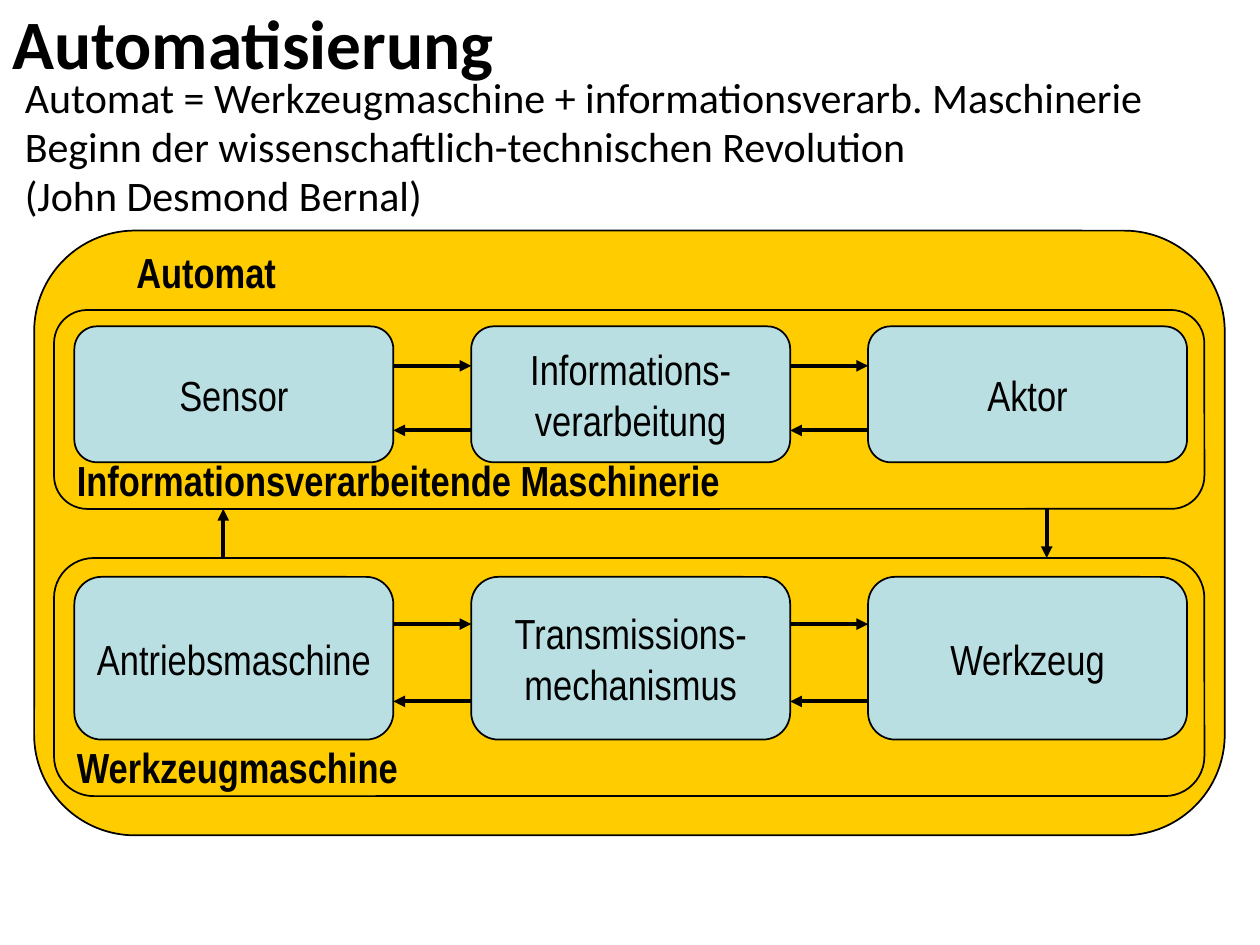
from lxml.etree import SubElement
from pptx import Presentation
from pptx.dml.color import RGBColor
from pptx.enum.shapes import MSO_CONNECTOR as Connector, MSO_SHAPE as Shape
from pptx.enum.text import MSO_ANCHOR as Anchor, PP_ALIGN as Align
from pptx.oxml.ns import qn
from pptx.util import Cm, Pt

BLACK = RGBColor(0x00, 0x00, 0x00)
YELLOW = RGBColor(0xFF, 0xCC, 0x00)
LIGHT_BLUE = RGBColor(0xBA, 0xDF, 0xE2)
HEADING_FONT, DIAGRAM_FONT = "Calibri", "Arial Narrow"

TITLE = "Automatisierung"
STATEMENTS = [
    "Automat = Werkzeugmaschine + informationsverarb. Maschinerie",
    "Beginn der wissenschaftlich-technischen Revolution",
    "(John Desmond Bernal)",
]
# Vertical measures in cm
MACHINES = [
    {"label": "Informationsverarbeitende Maschinerie", "label_top": 9.04,
     "top": 6.25, "height": 4.01, "part_top": 6.58, "part_height": 2.74,
     "parts": ["Sensor", "Informations-\nverarbeitung", "Aktor"]},
    {"label": "Werkzeugmaschine", "label_top": 14.83,
     "top": 11.25, "height": 4.8, "part_top": 11.63, "part_height": 3.28,
     "parts": ["Antriebsmaschine", "Transmissions-\nmechanismus", "Werkzeug"]},
]
MACHINE_LEFT, MACHINE_WIDTH = 1.09, 23.19
PART_LEFT, PART_WIDTH, PART_PITCH = 1.5, 6.43, 8
FORWARD, BACKWARD = 0.29, 0.765  # arrow heights as shares of the part height
UP_ARROW_X, DOWN_ARROW_X = 4.5, 21.1


def write(shape, text, size=24, font=DIAGRAM_FONT, bold=False, align=Align.LEFT):
    shape.text_frame.text = text
    for paragraph in shape.text_frame.paragraphs:
        paragraph.alignment = align
        paragraph.font.size = Pt(size)
        paragraph.font.name = font
        paragraph.font.bold = bold
        paragraph.font.color.rgb = BLACK


def add_text(page, left, top, width, height, text, **style):
    box = page.shapes.add_textbox(Cm(left), Cm(top), Cm(width), Cm(height))
    box.text_frame.word_wrap = True
    write(box, text, **style)
    return box


def add_rounded(page, left, top, width, height, color=None):
    shape = page.shapes.add_shape(
        Shape.ROUNDED_RECTANGLE, Cm(left), Cm(top), Cm(width), Cm(height))
    shape.shadow.inherit = False
    if color is None:
        shape.fill.background()
    else:
        shape.fill.solid()
        shape.fill.fore_color.rgb = color
    shape.line.color.rgb = BLACK
    shape.line.width = Pt(1)
    return shape


def add_arrow(page, x1, y1, x2, y2):
    arrow = page.shapes.add_connector(
        Connector.STRAIGHT, Cm(x1), Cm(y1), Cm(x2), Cm(y2))
    arrow.line.color.rgb = BLACK
    arrow.line.width = Pt(2.25)
    SubElement(arrow.line._get_or_add_ln(), qn("a:tailEnd"), type="triangle")
    SubElement(arrow._element.spPr, qn("a:effectLst"))


def add_machine(page, machine):
    """Draw a frame with its parts, the arrows between them and the label."""
    top, height = machine["part_top"], machine["part_height"]
    add_rounded(page, MACHINE_LEFT, machine["top"], MACHINE_WIDTH, machine["height"])
    for index, name in enumerate(machine["parts"]):
        left = PART_LEFT + index * PART_PITCH
        part = add_rounded(page, left, top, PART_WIDTH, height, LIGHT_BLUE)
        part.text_frame.word_wrap = False
        part.text_frame.vertical_anchor = Anchor.MIDDLE
        write(part, name, align=Align.CENTER)
        if index:
            previous_right = left - PART_PITCH + PART_WIDTH
            forward_y, backward_y = top + FORWARD * height, top + BACKWARD * height
            add_arrow(page, previous_right, forward_y, left, forward_y)
            add_arrow(page, left, backward_y, previous_right, backward_y)
    add_text(page, 1.3, machine["label_top"], 22, 1.27, machine["label"], bold=True)


def main():
    deck = Presentation()
    deck.slide_width, deck.slide_height = Cm(25.4), Cm(19.05)
    page = deck.slides.add_slide(deck.slide_layouts[6])

    title = add_text(page, 0, 0.15, 25.1, 1.37, TITLE,
                     size=39.6, font=HEADING_FONT, bold=True)
    title.text_frame.vertical_anchor = Anchor.MIDDLE
    body = add_text(page, 0, 1.52, 25.4, 3.3, "\n".join(STATEMENTS), font=HEADING_FONT)
    body.text_frame.margin_left = Cm(0.5)
    for index, paragraph in enumerate(body.text_frame.paragraphs):
        paragraph.line_spacing = 0.8
        if index:
            paragraph.space_before = Pt(4.8)

    add_rounded(page, 0.69, 4.65, 24, 12.19, YELLOW)
    add_text(page, 2.5, 4.85, 6.96, 1.27, "Automat", bold=True)
    for machine in MACHINES:
        add_machine(page, machine)

    upper, lower = MACHINES
    gap_top, gap_bottom = upper["top"] + upper["height"], lower["top"]
    add_arrow(page, UP_ARROW_X, gap_bottom, UP_ARROW_X, gap_top)
    add_arrow(page, DOWN_ARROW_X, gap_top, DOWN_ARROW_X, gap_bottom)

    deck.save("out.pptx")


if __name__ == "__main__":
    main()
